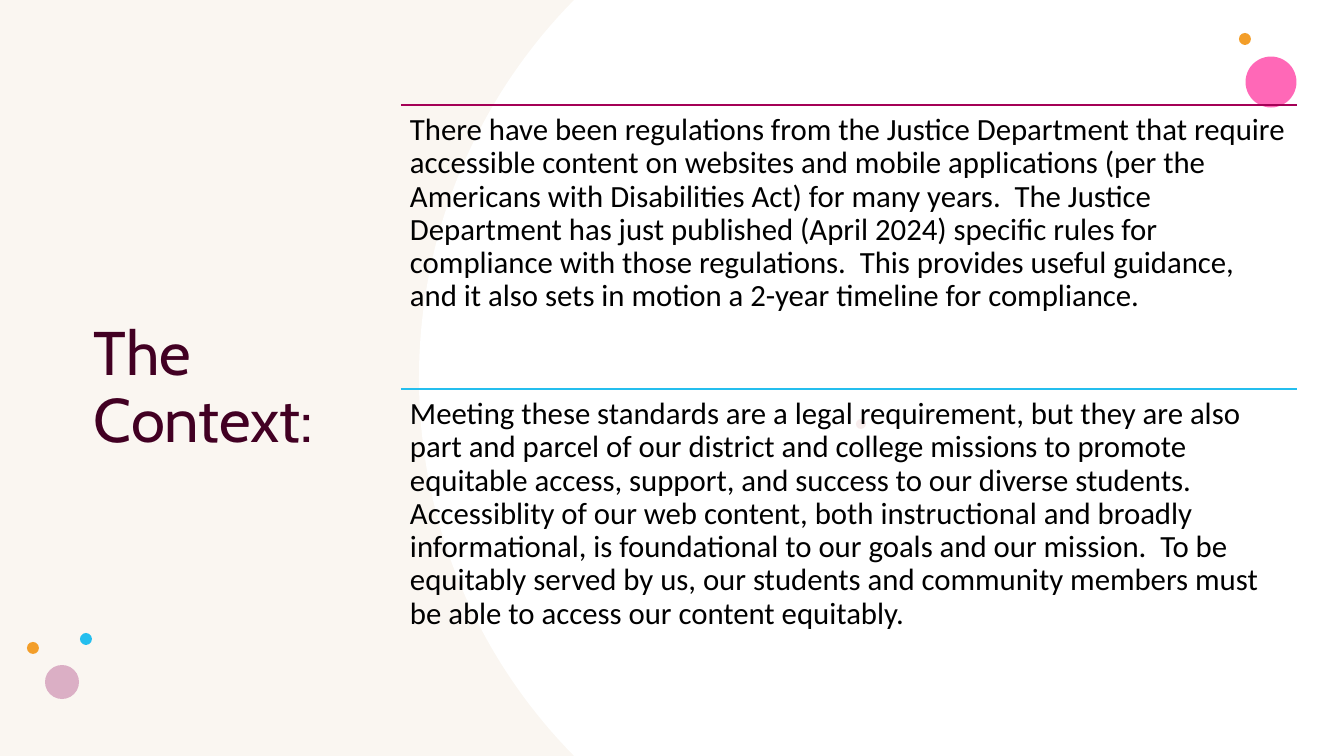
import math

import lxml.etree
import pptx
import pptx.dml.color
import pptx.enum.shapes
import pptx.enum.text
import pptx.oxml.ns
import pptx.util

WIDTH, HEIGHT = 1344, 756
PX = 12192000 / WIDTH

TITLE = "The Context:"
TITLE_BOX = (85, 105, 315, 568)
POINTS = [
    ("A40056", "There have been regulations from the Justice Department that require accessible content on websites "
     "and mobile applications (per the Americans with Disabilities Act) for many years.  The Justice Department "
     "has just published (April 2024) specific rules for compliance with those regulations.  This provides useful "
     "guidance, and it also sets in motion a 2-year timeline for compliance."),
    ("24BEEE", "Meeting these standards are a legal requirement, but they are also part and parcel of our district "
     "and college missions to promote equitable access, support, and success to our diverse students.  Accessiblity "
     "of our web content, both instructional and broadly informational, is foundational to our goals and our "
     "mission.  To be equitably served by us, our students and community members must be able to access our "
     "content equitably."),
]
POINT_LEFT, POINT_TOP, POINT_WIDTH, POINT_HEIGHT = 401, 105, 896, 284

DOTS = [
    (1271, 82, 51, "FF2F9C", 72),
    (1245, 39, 12, "F39E29", 100),
    (861, 424, 10, "E3BEBE", 28),
    (86, 639, 12, "24BEEE", 100),
    (62, 682, 34, "DBAFC5", 100),
    (33, 648, 12, "F39E29", 100),
]
CURVE_CENTRE, CURVE_RADIUS, CURVE_STEPS = 957, 538, 90


def emu(px):
    return pptx.util.Emu(round(px * PX))


def colour(hex_string):
    return pptx.dml.color.RGBColor.from_string(hex_string)


def paint(shape, hex_string, opacity=100):
    shape.shadow.inherit = False
    shape.line.fill.background()
    shape.fill.solid()
    shape.fill.fore_color.rgb = colour(hex_string)
    if opacity < 100:
        fill = shape._element.spPr.find(pptx.oxml.ns.qn("a:solidFill"))
        alpha = lxml.etree.SubElement(fill[0], pptx.oxml.ns.qn("a:alpha"))
        alpha.set("val", str(opacity * 1000))


def add_solid(slide, kind, box, hex_string, opacity):
    shape = slide.shapes.add_shape(kind, *map(emu, box))
    paint(shape, hex_string, opacity)


def add_curve(slide):
    middle = HEIGHT / 2
    edge = []
    for step in range(CURVE_STEPS + 1):
        y = HEIGHT - HEIGHT * step / CURVE_STEPS
        x = CURVE_CENTRE - math.sqrt(CURVE_RADIUS ** 2 - (y - middle) ** 2)
        edge.append((emu(x), emu(y)))
    builder = slide.shapes.build_freeform(emu(WIDTH), emu(0))
    builder.add_line_segments([(emu(WIDTH), emu(HEIGHT))] + edge, close=True)
    paint(builder.convert_to_shape(), "FFFFFF")


def add_text(slide, box, text, font, size, hex_string, anchor):
    frame = slide.shapes.add_textbox(*map(emu, box)).text_frame
    frame.word_wrap = True
    frame.vertical_anchor = anchor
    frame.margin_left = frame.margin_right = emu(9)
    frame.margin_top = frame.margin_bottom = emu(9)
    frame.text = text
    paragraph = frame.paragraphs[0]
    paragraph.line_spacing = 0.9
    run = paragraph.runs[0]
    run.font.name = font
    run.font.size = pptx.util.Pt(size)
    run.font.color.rgb = colour(hex_string)


def add_rule(slide, y, hex_string):
    rule = slide.shapes.add_connector(
        pptx.enum.shapes.MSO_CONNECTOR.STRAIGHT,
        emu(POINT_LEFT), emu(y), emu(POINT_LEFT + POINT_WIDTH), emu(y))
    rule.line.color.rgb = colour(hex_string)
    rule.line.width = pptx.util.Pt(1)
    lxml.etree.SubElement(rule._element.spPr, pptx.oxml.ns.qn("a:effectLst"))


def main():
    deck = pptx.Presentation()
    deck.slide_width, deck.slide_height = emu(WIDTH), emu(HEIGHT)
    slide = deck.slides.add_slide(deck.slide_layouts[6])
    shapes = pptx.enum.shapes.MSO_SHAPE
    anchors = pptx.enum.text.MSO_ANCHOR

    add_solid(slide, shapes.RECTANGLE, (0, 0, WIDTH, HEIGHT), "F0E2D3", 30)
    add_curve(slide)
    for x, y, size, hex_string, opacity in DOTS:
        box = (x - size / 2, y - size / 2, size, size)
        add_solid(slide, shapes.OVAL, box, hex_string, opacity)

    add_text(slide, TITLE_BOX, TITLE, "Cabin", 44, "420023", anchors.MIDDLE)
    for index, (rule_colour, text) in enumerate(POINTS):
        top = POINT_TOP + index * POINT_HEIGHT
        add_rule(slide, top, rule_colour)
        box = (POINT_LEFT, top, POINT_WIDTH, POINT_HEIGHT)
        add_text(slide, box, text, "Calibri", 22, "000000", anchors.TOP)

    deck.save("out.pptx")


if __name__ == "__main__":
    main()
